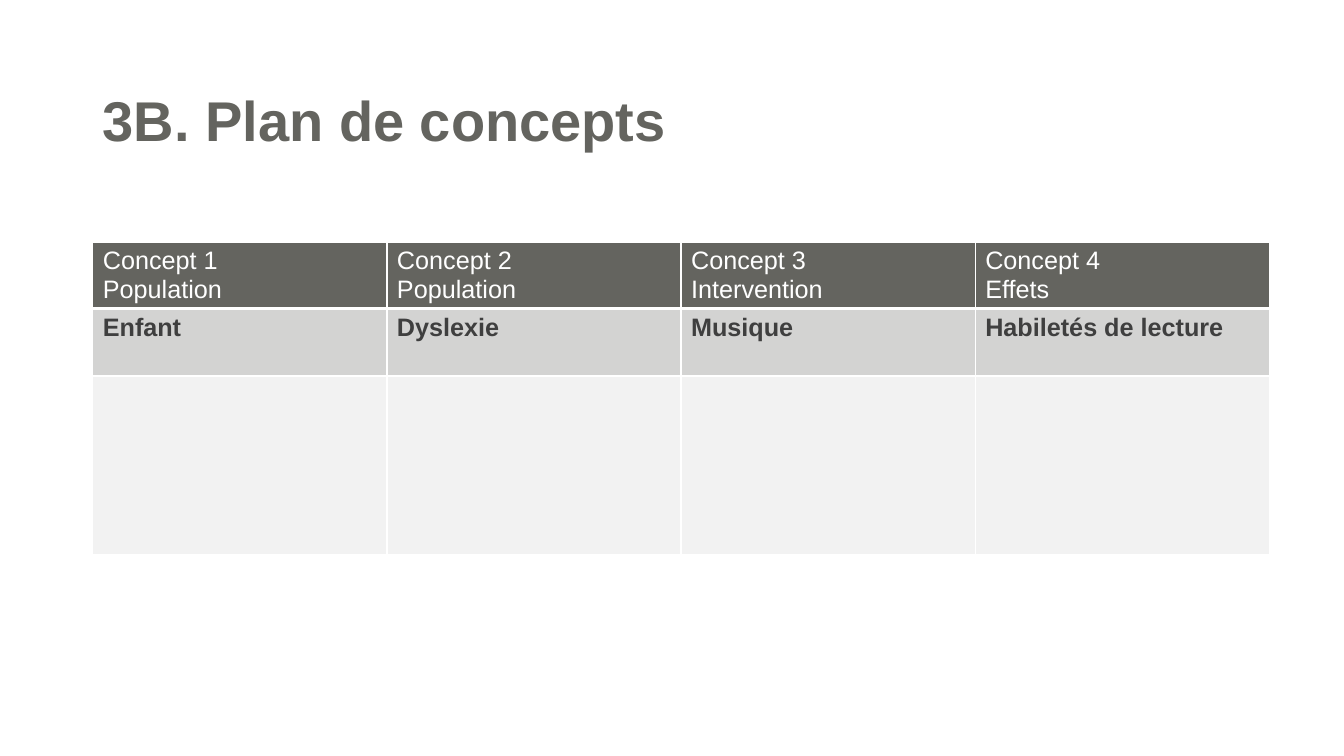
import pptx
import pptx.dml.color
import pptx.enum.text
import pptx.oxml
import pptx.oxml.ns
import pptx.util

RGBColor = pptx.dml.color.RGBColor
Inches = pptx.util.Inches
Pt = pptx.util.Pt

WHITE = RGBColor(0xFF, 0xFF, 0xFF)
OLIVE = RGBColor(0x64, 0x64, 0x5F)
CHARCOAL = RGBColor(0x3F, 0x3F, 0x3F)
SILVER = RGBColor(0xD3, 0xD3, 0xD2)
PALE = RGBColor(0xF2, 0xF2, 0xF2)

TITLE_BOX = (0.92, 0.87, 11.5, 1.18)
TABLE_BOX = (0.92, 2.4, 11.67, 3.1)
ROW_HEIGHTS = (0.66, 0.67, 1.77)

TITLE_FONT = {"name": "Arial", "size": Pt(40), "bold": True}
HEADER_FONT = {"name": "Arial", "size": Pt(18), "bold": False}
TERM_FONT = {"name": "Arial", "size": Pt(18), "bold": True}

# Each row: cell texts, fill, font format, text colour, bottom border in points
CONCEPT_ROWS = [
    (["Concept 1\nPopulation", "Concept 2\nPopulation",
      "Concept 3\nIntervention", "Concept 4\nEffets"],
     OLIVE, HEADER_FONT, WHITE, 3),
    (["Enfant", "Dyslexie", "Musique", "Habiletés de lecture"],
     SILVER, TERM_FONT, CHARCOAL, 1),
    ([""] * 4, PALE, HEADER_FONT, CHARCOAL, 1),
]


def format_text(tf, fmt, color):
    for p in tf.paragraphs:
        for key, value in fmt.items():
            setattr(p.font, key, value)
        p.font.color.rgb = color
        for r in p.runs:
            for key, value in fmt.items():
                setattr(r.font, key, value)
            r.font.color.rgb = color


def set_borders(cell, bottom):
    """Draw white cell borders; they must precede the fill in tcPr."""
    props = cell._tc.get_or_add_tcPr()
    widths = {"lnL": 1, "lnR": 1, "lnT": 1, "lnB": bottom}
    for i, (side, width) in enumerate(widths.items()):
        line = pptx.oxml.parse_xml(
            f'<a:{side} {pptx.oxml.ns.nsdecls("a")} w="{Pt(width)}">'
            f'<a:solidFill><a:srgbClr val="{WHITE}"/></a:solidFill></a:{side}>')
        props.insert(i, line)


def add_title(slide, box, text):
    sp = slide.shapes.title
    sp.left, sp.top, sp.width, sp.height = map(Inches, box)
    tf = sp.text_frame
    tf.text = text
    tf.word_wrap = True
    tf.vertical_anchor = pptx.enum.text.MSO_ANCHOR.TOP
    p = tf.paragraphs[0]
    p.alignment = pptx.enum.text.PP_ALIGN.LEFT
    p.line_spacing = 0.9
    format_text(tf, TITLE_FONT, OLIVE)


def add_concept_table(slide, box, rows):
    columns = len(rows[0][0])
    table = slide.shapes.add_table(len(rows), columns, *map(Inches, box)).table
    for column in table.columns:
        column.width = Inches(box[2] / columns)
    for i, (texts, fill, fmt, color, bottom) in enumerate(rows):
        table.rows[i].height = Inches(ROW_HEIGHTS[i])
        for j, text in enumerate(texts):
            cell = table.cell(i, j)
            cell.text = text
            cell.fill.solid()
            cell.fill.fore_color.rgb = fill
            set_borders(cell, bottom)
            format_text(cell.text_frame, fmt, color)


def main():
    prs = pptx.Presentation()
    prs.slide_width, prs.slide_height = Inches(13.33), Inches(7.5)
    slide = prs.slides.add_slide(prs.slide_layouts[5])  # title only
    add_title(slide, TITLE_BOX, "3B. Plan de concepts")
    add_concept_table(slide, TABLE_BOX, CONCEPT_ROWS)
    prs.save("out.pptx")


if __name__ == "__main__":
    main()
